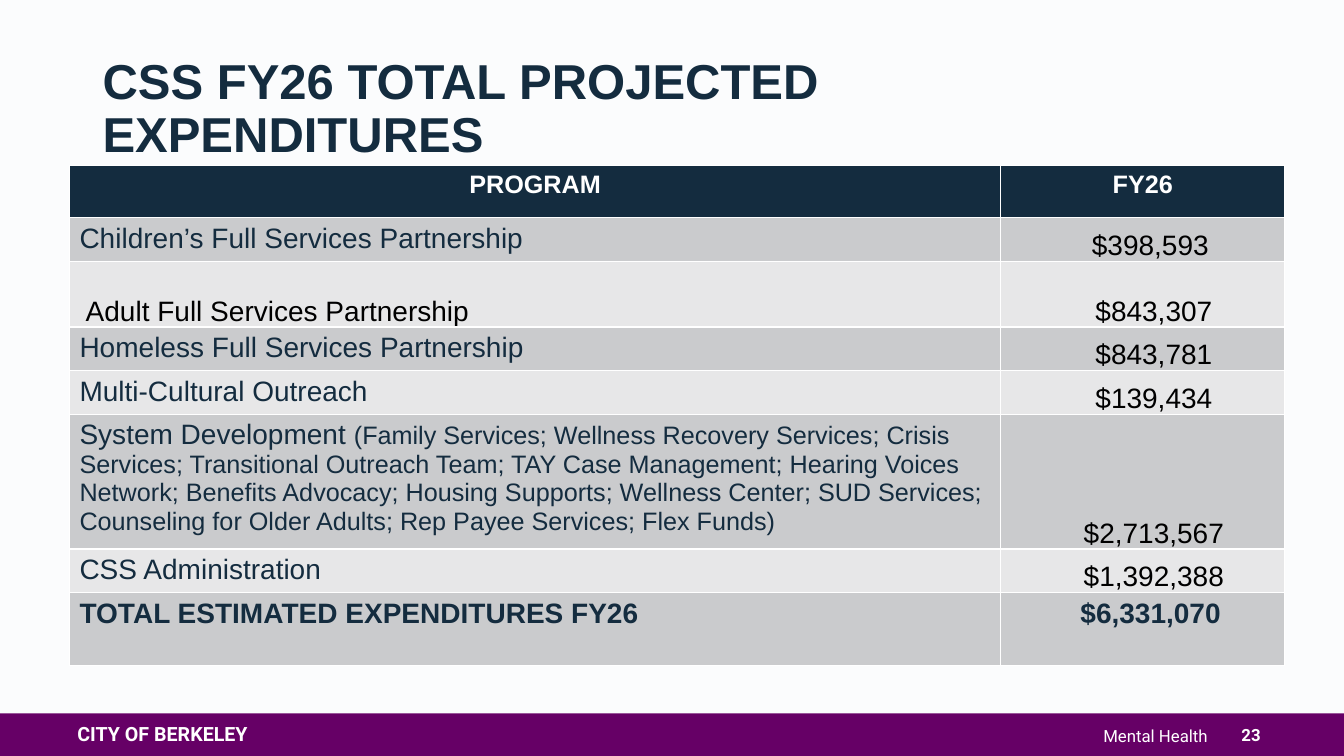
from dataclasses import dataclass

from pptx import Presentation
from pptx.dml.color import RGBColor
from pptx.enum.shapes import MSO_SHAPE
from pptx.enum.text import MSO_ANCHOR as Anchor, MSO_AUTO_SIZE as AutoSize, PP_ALIGN as Align
from pptx.slide import Slide
from pptx.table import _Cell as Cell
from pptx.util import Cm, Pt

NAVY, WHITE, BLACK, PURPLE = "142C3F", "FFFFFF", "000000", "660066"
BANDS = ("CACBCD", "E7E7E8")


@dataclass
class Entry:
    program: str
    amount: str
    height: float = 1.04
    detail: str = ""
    indent: float = 0.59
    plain: bool = False
    total: bool = False


@dataclass
class Label:
    text: str
    left: float
    top: float
    width: float
    height: float
    size: float
    align: Align
    bold: bool = True
    spacing: float = 0.9


ENTRIES = [
    Entry("Children’s Full Services Partnership", "$398,593", indent=0.41),
    Entry("Adult Full Services Partnership", "$843,307", height=1.65, plain=True),
    Entry("Homeless Full Services Partnership", "$843,781"),
    Entry("Multi-Cultural Outreach", "$139,434"),
    Entry("System Development ", "$2,713,567", height=3.18,
          detail="(Family Services; Wellness Recovery Services; Crisis Services; "
                 "Transitional Outreach Team; TAY Case Management; Hearing Voices Network; "
                 "Benefits Advocacy; Housing Supports; Wellness Center; SUD Services; "
                 "Counseling for Older Adults; Rep Payee Services; Flex Funds)"),
    Entry("CSS Administration", "$1,392,388"),
    Entry("TOTAL ESTIMATED EXPENDITURES FY26", "$6,331,070", height=1.83,
          indent=0.65, total=True),
]

LABELS = [
    Label("CITY OF BERKELEY", 1.7, 17.65, 6.35, 1.73, 14, Align.LEFT),
    Label("Mental Health", 14.81, 17.7, 15.88, 1.73, 12, Align.RIGHT, bold=False),
    Label("23", 30.68, 17.98, 1.7, 1.07, 12, Align.CENTER, spacing=1),
]


def rgb(code: str) -> RGBColor:
    return RGBColor.from_string(code)


def style_font(font, size: float, color: str, bold: bool = False, name: str = "Arial") -> None:
    font.name, font.size, font.bold = name, Pt(size), bold
    font.color.rgb = rgb(color)


def fill_cell(cell: Cell, text: str, size: float, color: str, fill: str,
              bold: bool = False, align: Align = Align.LEFT) -> None:
    cell.text_frame.text = text
    p = cell.text_frame.paragraphs[0]
    p.alignment = align
    style_font(p.runs[0].font, size, color, bold)
    cell.fill.solid()
    cell.fill.fore_color.rgb = rgb(fill)


def tighten(cell: Cell, left: float) -> None:
    cell.vertical_anchor = Anchor.BOTTOM
    cell.margin_left = Cm(left)
    cell.margin_right = cell.margin_top = Cm(0.03)
    cell.margin_bottom = Cm(0)


def add_title(slide: Slide) -> None:
    sp = slide.shapes.title
    sp.left, sp.top, sp.width, sp.height = Cm(2.33), Cm(1.32), Cm(29.21), Cm(2.44)
    tf = sp.text_frame
    tf.text = "CSS FY26 TOTAL PROJECTED\vEXPENDITURES"
    tf.auto_size, tf.vertical_anchor = AutoSize.NONE, Anchor.TOP
    p = tf.paragraphs[0]
    p.alignment, p.line_spacing = Align.LEFT, 0.9
    for r in p.runs:
        style_font(r.font, 35, NAVY, True)


def add_footer(slide: Slide) -> None:
    bar = slide.shapes.add_shape(MSO_SHAPE.RECTANGLE, 0, Cm(17.98), Cm(33.87), Cm(1.07))
    bar.shadow.inherit = False
    bar.fill.solid()
    bar.fill.fore_color.rgb = rgb(PURPLE)
    bar.line.fill.background()
    for label in LABELS:
        sp = slide.shapes.add_textbox(Cm(label.left), Cm(label.top),
                                      Cm(label.width), Cm(label.height))
        tf = sp.text_frame
        tf.word_wrap, tf.vertical_anchor = True, Anchor.MIDDLE
        tf.text = label.text
        p = tf.paragraphs[0]
        p.alignment, p.line_spacing = label.align, label.spacing
        style_font(p.runs[0].font, label.size, WHITE, label.bold, "Roboto")


def add_budget(slide: Slide) -> None:
    heights = [1.32] + [entry.height for entry in ENTRIES]
    table = slide.shapes.add_table(len(heights), 2, Cm(1.75), Cm(4.17),
                                   Cm(30.63), Cm(sum(heights))).table
    table.horz_banding = False
    for column, width in zip(table.columns, (23.47, 7.16)):
        column.width = Cm(width)
    for row, height in zip(table.rows, heights):
        row.height = Cm(height)
    for col, heading in enumerate(("PROGRAM", "FY26")):
        fill_cell(table.cell(0, col), heading, 18, WHITE, NAVY, True, Align.CENTER)
    for i, entry in enumerate(ENTRIES):
        program, amount = table.cell(i + 1, 0), table.cell(i + 1, 1)
        fill = BANDS[i % 2]
        fill_cell(program, entry.program, 20, BLACK if entry.plain else NAVY, fill, entry.total)
        fill_cell(amount, entry.amount, 20, NAVY if entry.total else BLACK, fill,
                  entry.total, Align.CENTER)
        if entry.detail:
            r = program.text_frame.paragraphs[0].add_run()
            r.text = entry.detail
            style_font(r.font, 18, NAVY)
        if entry.plain:
            tighten(program, 0.41)
        if entry.total:
            amount.margin_left = Cm(entry.indent)
        else:
            tighten(amount, entry.indent)


def main() -> None:
    prs = Presentation()
    prs.slide_width, prs.slide_height = Cm(33.87), Cm(19.05)
    slide = prs.slides.add_slide(prs.slide_layouts[5])
    slide.background.fill.solid()
    slide.background.fill.fore_color.rgb = rgb("FBFCFD")
    add_footer(slide)
    add_title(slide)
    add_budget(slide)
    prs.save("out.pptx")


if __name__ == "__main__":
    main()
